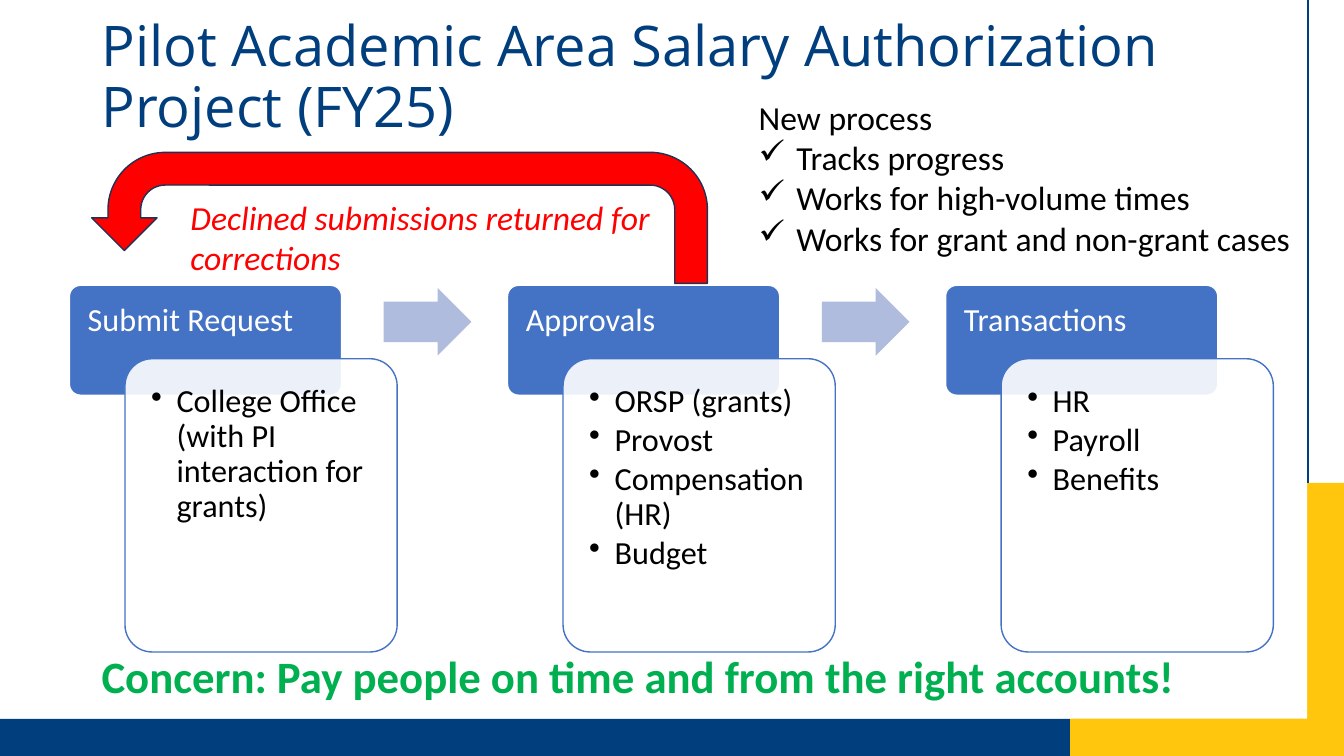
from lxml.etree import SubElement
from pptx import Presentation
from pptx.dml.color import RGBColor
from pptx.enum.shapes import MSO_CONNECTOR, MSO_SHAPE
from pptx.enum.text import MSO_ANCHOR
from pptx.oxml.ns import qn
from pptx.util import Cm, Pt

rgb = RGBColor.from_string
NAVY, GOLD, WHITE, BLUE, RED = "013E7D", "FFC60D", "FFFFFF", "4472C4", "FF0000"

deck = Presentation()
deck.slide_width, deck.slide_height = Cm(33.87), Cm(19.05)
slide = deck.slides.add_slide(deck.slide_layouts[6])
shapes = slide.shapes


def draw(kind, box, fill, line=None):
    shape = shapes.add_shape(kind, *map(Cm, box))
    shape.shadow.inherit = False
    shape.fill.solid()
    shape.fill.fore_color.rgb = rgb(fill)
    if line:
        shape.line.color.rgb = rgb(line)
        shape.line.width = Pt(1)
    else:
        shape.line.fill.background()
    return shape


def write(frame, lines, size, color, font="Calibri", bullet=None, indent=0,
          plain=0, space=1.0, after=0, bold=False, italic=False):
    """Fill a text frame; the first `plain` lines carry no bullet."""
    frame.word_wrap = True
    for n, text in enumerate(lines):
        para = frame.add_paragraph() if n else frame.paragraphs[0]
        para.alignment = 1
        para.line_spacing = space
        para.space_after = Pt(after)
        if bullet and n >= plain:
            props = para._p.get_or_add_pPr()
            props.set("marL", str(Cm(indent)))
            props.set("indent", str(-Cm(indent)))
            SubElement(props, qn("a:buChar"), char=bullet)
        run = para.add_run()
        run.text = text
        run.font.name, run.font.size = font, Pt(size)
        run.font.bold, run.font.italic = bold, italic
        run.font.color.rgb = rgb(color)


# Frame of the page
draw(MSO_SHAPE.RECTANGLE, (0, 18.11, 33.87, 0.94), NAVY)
draw(MSO_SHAPE.RECTANGLE, (26.97, 12.17, 6.9, 6.88), GOLD)
draw(MSO_SHAPE.RECTANGLE, (0, 0, 32.94, 18.11), WHITE)
rule = shapes.add_connector(MSO_CONNECTOR.STRAIGHT, Cm(32.97), Cm(0), Cm(32.97), Cm(12.17))
rule.line.color.rgb = rgb(NAVY)
rule.line.width = Pt(1.5)
SubElement(rule._element.spPr, qn("a:effectLst"))

title = shapes.add_textbox(Cm(2.31), Cm(0.15), Cm(29.21), Cm(3.68)).text_frame
title.vertical_anchor = MSO_ANCHOR.MIDDLE
write(title, ["Pilot Academic Area Salary Authorization Project (FY25)"], 40, "003E7D",
      font="Open Sans", space=0.9)

# Three steps, joined by arrows
steps = [
    ("Submit Request", ["College Office (with PI interaction for grants)"]),
    ("Approvals", ["ORSP (grants)", "Provost", "Compensation (HR)", "Budget"]),
    ("Transactions", ["HR", "Payroll", "Benefits"]),
]
for col, (name, items) in enumerate(steps):
    left = 1.75 + 11.04 * col
    head = draw(MSO_SHAPE.ROUNDED_RECTANGLE, (left, 7.19, 6.86, 2.77), BLUE, WHITE)
    card = draw(MSO_SHAPE.ROUNDED_RECTANGLE, (left + 1.4, 9.04, 6.86, 7.39), WHITE, BLUE)
    tint = card.fill._xPr.find(qn("a:solidFill"))[0]
    SubElement(tint, qn("a:alpha"), val="90000")
    for shape, inset in ((head, 0.38), (card, 0.46)):
        shape.adjustments[0] = 0.1
        frame = shape.text_frame
        frame.vertical_anchor = MSO_ANCHOR.TOP
        frame.margin_left = frame.margin_top = frame.margin_right = Cm(inset)
    write(head.text_frame, [name], 23, WHITE, space=0.9)
    write(card.text_frame, items, 23, "000000", bullet="•", indent=0.64, space=0.9, after=3)
    if col < len(steps) - 1:
        arrow = draw(MSO_SHAPE.RIGHT_ARROW, (left + 7.92, 7.26, 2.21, 1.7), "B0BCDE")
        arrow.adjustments[0] = 0.6

concern = shapes.add_textbox(Cm(2.31), Cm(16.23), Cm(28.7), Cm(1.63))
write(concern.text_frame, ["Concern: Pay people on time and from the right accounts!"],
      32, "00B050", bold=True)

# Way back for declined requests
back = draw(MSO_SHAPE.U_TURN_ARROW, (2.31, 3.84, 15.52, 3.3), RED, "1E3256")
back._element.spPr.xfrm.set("flipH", "1")
note = shapes.add_textbox(Cm(4.55), Cm(4.83), Cm(12.4), Cm(2.31))
write(note.text_frame, ["Declined submissions returned for corrections"], 24, RED, italic=True)

gains = shapes.add_textbox(Cm(18.87), Cm(2.31), Cm(14.22), Cm(4.37)).text_frame
write(gains, ["New process", "Tracks progress", "Works for high-volume times",
              "Works for grant and non-grant cases"],
      24, "000000", bullet="✓", indent=0.95, plain=1)
gains.word_wrap = False

deck.save("out.pptx")
